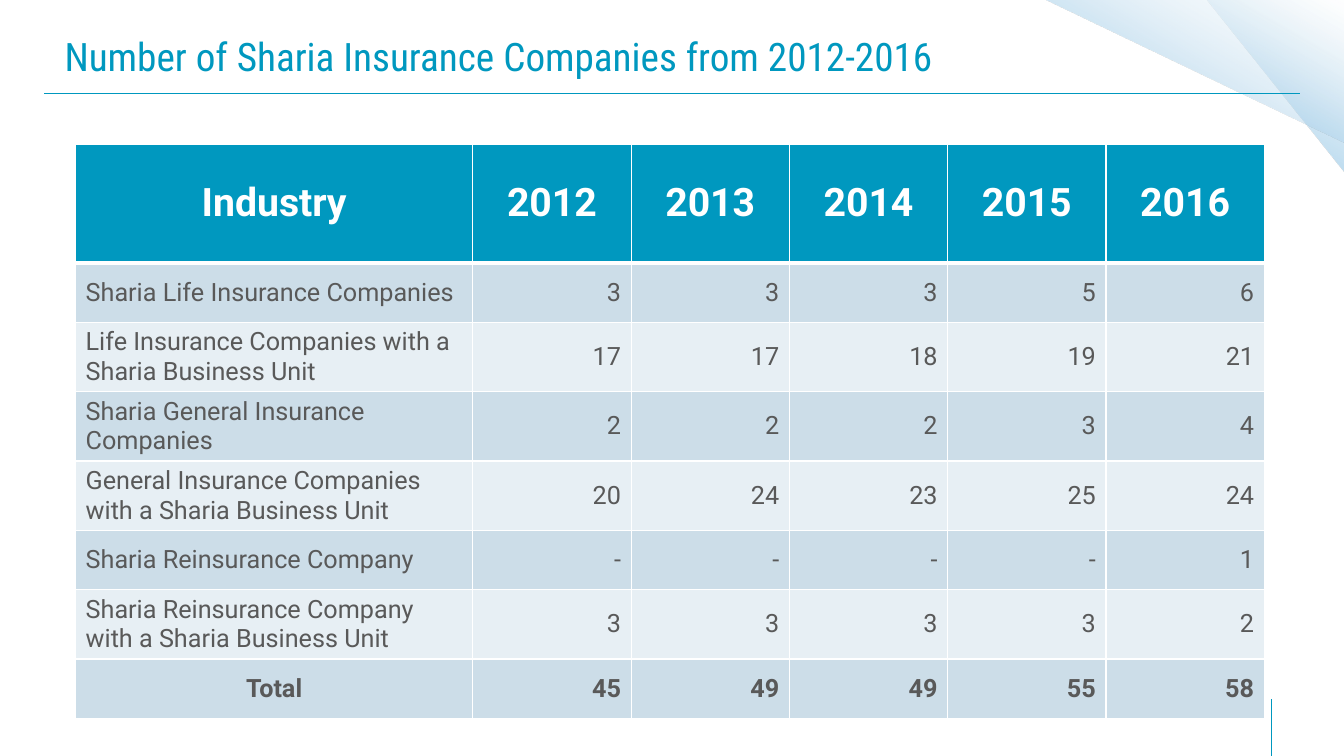
"""Build a slide with a table of sharia insurance companies by year."""
from typing import NamedTuple

from lxml import etree
from pptx import Presentation
from pptx.dml.color import RGBColor
from pptx.enum.shapes import MSO_CONNECTOR, MSO_SHAPE
from pptx.enum.text import MSO_ANCHOR, MSO_AUTO_SIZE, PP_ALIGN
from pptx.oxml import parse_xml
from pptx.oxml.ns import qn
from pptx.slide import Slide
from pptx.table import _Cell
from pptx.util import Inches, Pt

STRAIGHT = MSO_CONNECTOR.STRAIGHT
TRIANGLE = MSO_SHAPE.RIGHT_TRIANGLE
MIDDLE = MSO_ANCHOR.MIDDLE
NO_FIT = MSO_AUTO_SIZE.NONE
LEFT, CENTER, RIGHT = PP_ALIGN.LEFT, PP_ALIGN.CENTER, PP_ALIGN.RIGHT

TEAL = RGBColor(0x00, 0x98, 0xBF)
WHITE = RGBColor(0xFF, 0xFF, 0xFF)
GREY = RGBColor(0x59, 0x59, 0x59)
BAND_DARK = RGBColor(0xCC, 0xDD, 0xE8)
BAND_LIGHT = RGBColor(0xE7, 0xEF, 0xF4)
SKY = RGBColor(0x8F, 0xC8, 0xE8)
SKY_MID = RGBColor(0xA4, 0xCE, 0xE9)
SKY_PALE = RGBColor(0xDE, 0xED, 0xF6)

TITLE = "Number of Sharia Insurance Companies from 2012-2016"
TITLE_FONT = "Roboto Condensed"
TABLE_FONT = "Roboto"
COLUMN_WIDTHS = [3.94] + [1.57] * 5
ROW_HEIGHTS = [1.18] + [0.59] * 7


class Triangle(NamedTuple):
    """Place of a corner triangle in inches."""
    left: float
    top: float
    width: float
    height: float


class Rule(NamedTuple):
    """Ends of a thin line in inches."""
    x1: float
    y1: float
    x2: float
    y2: float


class GradientStop(NamedTuple):
    """Position and opacity in percent of a gradient colour."""
    position: int
    color: RGBColor
    opacity: int


class IndustryRow(NamedTuple):
    """A label and its yearly values."""
    label: str
    values: tuple[str, ...]


TRIANGLES = [Triangle(11.97, 0, 1.36, 1.71), Triangle(10.36, 0, 2.99, 1.42)]
RULES = [Rule(0.44, 0.93, 12.89, 0.93), Rule(12.61, 7.5, 12.61, 6.93)]
STOPS = [
    GradientStop(0, SKY, 100),
    GradientStop(50, SKY_MID, 44),
    GradientStop(100, SKY_PALE, 0),
]
ROWS = [
    IndustryRow("Industry", ("2012", "2013", "2014", "2015", "2016")),
    IndustryRow("Sharia Life Insurance Companies", ("3", "3", "3", "5", "6")),
    IndustryRow("Life Insurance Companies with a Sharia Business Unit",
                ("17", "17", "18", "19", "21")),
    IndustryRow("Sharia General Insurance Companies", ("2", "2", "2", "3", "4")),
    IndustryRow("General Insurance Companies with a Sharia Business Unit",
                ("20", "24", "23", "25", "24")),
    IndustryRow("Sharia Reinsurance Company", ("-", "-", "-", "-", "1")),
    IndustryRow("Sharia Reinsurance Company with a Sharia Business Unit",
                ("3", "3", "3", "3", "2")),
    IndustryRow("Total", ("45", "49", "49", "55", "58")),
]


def gradient_xml() -> str:
    """Return the fading fill shared by the corner triangles."""
    stops = "".join(
        f'<a:gs pos="{stop.position * 1000}"><a:srgbClr val="{stop.color}">'
        f'<a:alpha val="{stop.opacity * 1000}"/></a:srgbClr></a:gs>'
        for stop in STOPS)
    return (
        '<a:gradFill xmlns:a="http://schemas.openxmlformats.org/drawingml/2006/main"'
        f' rotWithShape="1"><a:gsLst>{stops}</a:gsLst>'
        f'<a:lin ang="{120 * 60000}" scaled="0"/></a:gradFill>')


def add_triangle(slide: Slide, triangle: Triangle) -> None:
    """Add a fading triangle with its square corner at top right."""
    shape = slide.shapes.add_shape(TRIANGLE, *map(Inches, triangle))
    shape.rotation = 180
    shape.shadow.inherit = False
    shape.line.fill.background()
    geometry = shape.element.spPr.find(qn("a:prstGeom"))
    geometry.addnext(parse_xml(gradient_xml()))


def add_rule(slide: Slide, rule: Rule) -> None:
    """Add a thin teal line."""
    connector = slide.shapes.add_connector(STRAIGHT, *map(Inches, rule))
    connector.line.color.rgb = TEAL
    connector.line.width = Pt(1)
    etree.SubElement(connector.element.spPr, qn("a:effectLst"))


def add_title(slide: Slide) -> None:
    """Place and format the title placeholder."""
    title = slide.shapes.title
    title.left, title.top = Inches(0.46), Inches(0.14)
    title.width, title.height = Inches(12.21), Inches(0.82)
    frame = title.text_frame
    frame.text = TITLE
    frame.word_wrap = True
    frame.auto_size = NO_FIT
    frame.vertical_anchor = MIDDLE
    frame.margin_left = frame.margin_right = Inches(0.18)
    frame.margin_top = frame.margin_bottom = Inches(0.09)
    paragraph = frame.paragraphs[0]
    paragraph.alignment = LEFT
    font = paragraph.runs[0].font
    font.name, font.size = TITLE_FONT, Pt(28)
    font.color.rgb = TEAL


def set_borders(cell: _Cell, top: int, bottom: int) -> None:
    """Draw white cell borders, with the given top and bottom points."""
    properties = cell._tc.get_or_add_tcPr()
    for side, points in (("L", 1), ("R", 1), ("T", top), ("B", bottom)):
        border = etree.SubElement(properties, qn(f"a:ln{side}"), w=str(Pt(points)))
        fill = etree.SubElement(border, qn("a:solidFill"))
        etree.SubElement(fill, qn("a:srgbClr"), val=str(WHITE))


def fill_cell(cell: _Cell, text: str, row: int, column: int) -> None:
    """Write and format one table cell by its row and column."""
    header, total = row == 0, row == len(ROWS) - 1
    set_borders(cell, 3 if row == 1 else 1, 3 if header else 1)
    cell.fill.solid()
    band = BAND_DARK if row % 2 else BAND_LIGHT
    cell.fill.fore_color.rgb = TEAL if header else band
    cell.vertical_anchor = MIDDLE
    cell.text_frame.text = text
    paragraph = cell.text_frame.paragraphs[0]
    if header or (total and column == 0):
        paragraph.alignment = CENTER
    else:
        paragraph.alignment = RIGHT if column else LEFT
    font = paragraph.runs[0].font
    font.name, font.size = TABLE_FONT, Pt(28 if header else 18)
    font.bold = header or total
    font.color.rgb = WHITE if header else GREY


def add_company_table(slide: Slide) -> None:
    """Add the table of company counts."""
    frame = slide.shapes.add_table(
        len(ROWS), len(COLUMN_WIDTHS), Inches(0.75), Inches(1.43),
        Inches(sum(COLUMN_WIDTHS)), Inches(sum(ROW_HEIGHTS)))
    table = frame.table
    for column, width in zip(table.columns, COLUMN_WIDTHS):
        column.width = Inches(width)
    for row, height in zip(table.rows, ROW_HEIGHTS):
        row.height = Inches(height)
    for row_index, industry in enumerate(ROWS):
        for column_index, text in enumerate((industry.label, *industry.values)):
            fill_cell(table.cell(row_index, column_index), text,
                      row_index, column_index)


def main() -> None:
    """Build and save the deck."""
    deck = Presentation()
    deck.slide_width, deck.slide_height = Inches(13.33), Inches(7.5)
    slide = deck.slides.add_slide(deck.slide_layouts.get_by_name("Title Only"))
    for triangle in TRIANGLES:
        add_triangle(slide, triangle)
    for rule in RULES:
        add_rule(slide, rule)
    add_title(slide)
    add_company_table(slide)
    deck.save("out.pptx")


if __name__ == "__main__":
    main()
